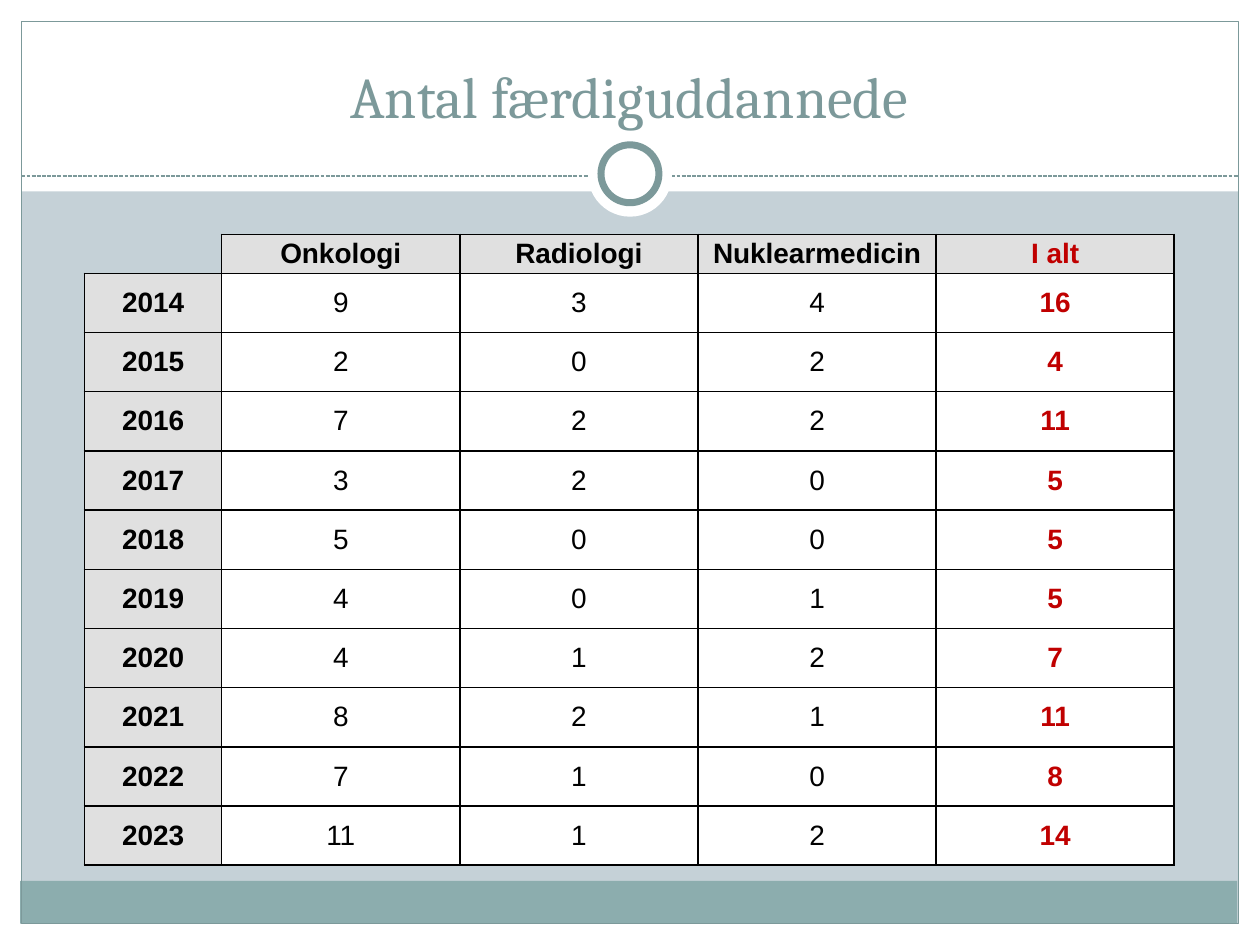
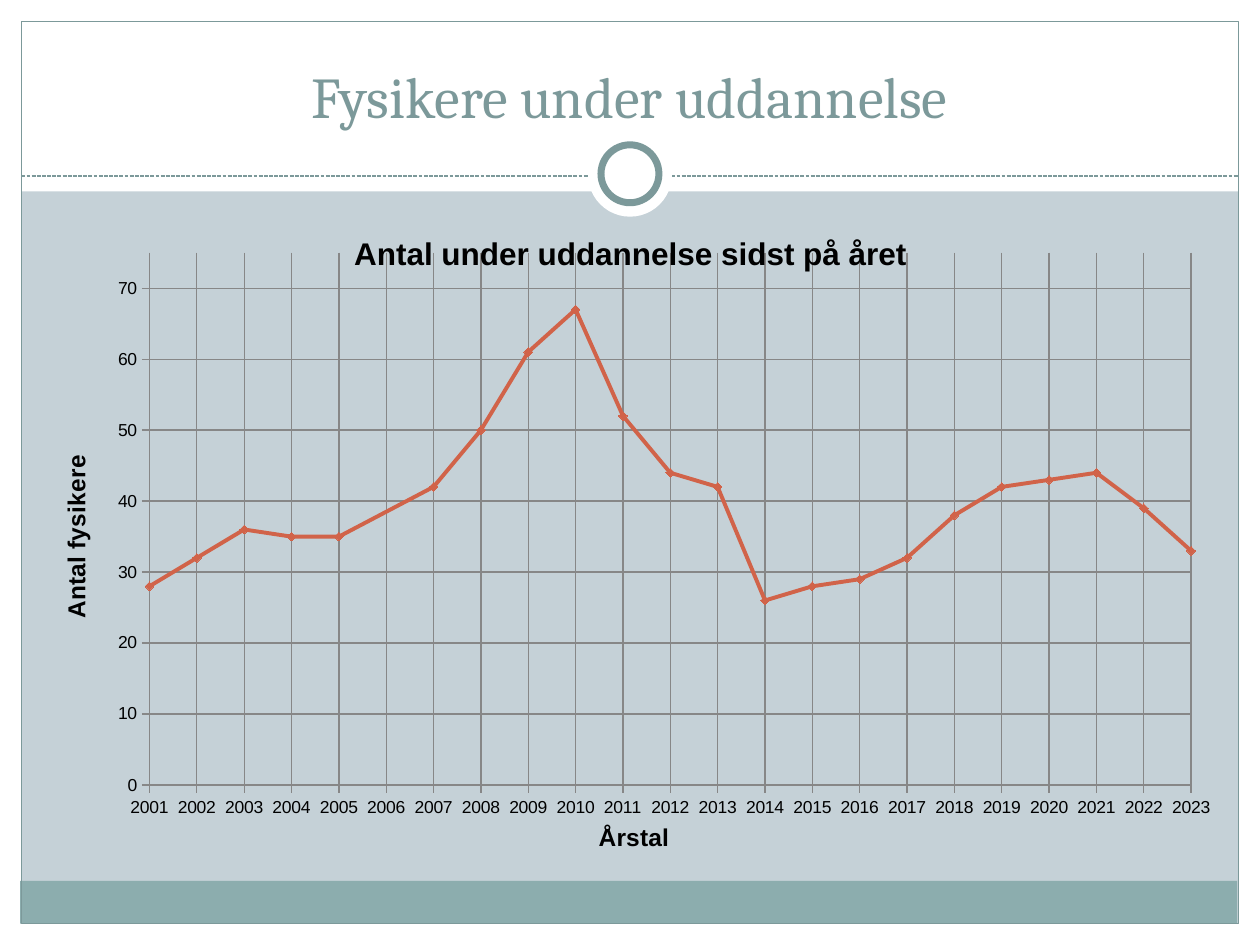
"""Build two slides about physicists in training: a table of graduates and a chart of trainees."""
from lxml.etree import SubElement
from pptx import Presentation
from pptx.chart.data import XyChartData
from pptx.dml.color import RGBColor
from pptx.enum.chart import XL_CHART_TYPE, XL_MARKER_STYLE, XL_TICK_MARK
from pptx.enum.dml import MSO_LINE
from pptx.enum.shapes import MSO_CONNECTOR, MSO_SHAPE
from pptx.enum.text import MSO_ANCHOR, PP_ALIGN
from pptx.oxml import parse_xml
from pptx.oxml.ns import nsdecls, qn
from pptx.util import Inches, Pt

WHITE = RGBColor(0xFF, 0xFF, 0xFF)
BLACK = RGBColor(0x00, 0x00, 0x00)
BLUE_GREY = RGBColor(0xC5, 0xD1, 0xD7)
TEAL = RGBColor(0x8C, 0xAD, 0xAE)
DARK_TEAL = RGBColor(0x7C, 0x99, 0x9A)
HEADER_GREY = RGBColor(0xE0, 0xE0, 0xE0)
GRID_GREY = RGBColor(0x87, 0x87, 0x87)
RED = RGBColor(0xC0, 0x00, 0x00)
ORANGE = RGBColor(0xD1, 0x63, 0x49)
TITLE_FONT = {"name": "Cambria", "size": Pt(33), "bold": False}
CELL_FORMAT = {
    "vertical_anchor": MSO_ANCHOR.MIDDLE,
    "margin_left": Inches(0.07),
    "margin_right": Inches(0.07),
    "margin_top": 0,
    "margin_bottom": 0,
}


def percent_box(left, top, width, height):
    """Turn percentages of the slide's size into lengths."""
    return [
        int(share * side / 100)
        for share, side in zip(
            (left, top, width, height),
            (presentation.slide_width, presentation.slide_height) * 2,
        )
    ]


def set_format(target, values, color=None):
    """Set attributes from a dict of values, and a font colour if given."""
    for name, value in values.items():
        setattr(target, name, value)
    if color is not None:
        target.color.rgb = color


presentation = Presentation()
presentation.slide_width = Inches(10)
presentation.slide_height = Inches(7.5)
layout = presentation.slide_layouts[5]
layout.background.fill.solid()
layout.background.fill.fore_color.rgb = BLUE_GREY
layout_title, *footers = layout.placeholders
for footer in footers:
    layout.shapes.element.remove(footer.element)
set_format(
    layout_title,
    dict(zip(("left", "top", "width", "height"), percent_box(3.3, 3.33, 93.3, 11.07))),
)

slides = []
for title_text in ("Antal færdiguddannede", "Fysikere under uddannelse"):
    slide = presentation.slides.add_slide(layout)
    title = slide.shapes.title
    title.text = title_text
    title.text_frame.vertical_anchor = MSO_ANCHOR.BOTTOM
    paragraph = title.text_frame.paragraphs[0]
    paragraph.alignment = PP_ALIGN.CENTER
    set_format(paragraph.runs[0].font, TITLE_FONT, DARK_TEAL)
    slides.append(slide)
table_slide, chart_slide = slides

RECTANGLE, OVAL = MSO_SHAPE.RECTANGLE, MSO_SHAPE.OVAL
decorations = [
    (RECTANGLE, (0, 97.73, 100, 2.27), WHITE, 0),
    (RECTANGLE, (0, 0, 100, 20.27), WHITE, 0),
    (RECTANGLE, (0, 0, 1.7, 100), WHITE, 0),
    (RECTANGLE, (98.3, 0, 1.7, 100), WHITE, 0),
    (RECTANGLE, (1.6, 93.2, 96.6, 4.53), TEAL, 0),
    (RECTANGLE, (1.7, 2.27, 96.6, 95.47), None, 0.75),
    (None, (1.7, 18.63, 98.3, 18.63), None, 0.75),
    (OVAL, (46.67, 14, 6.67, 8.93), WHITE, 0),
    (OVAL, (47.7, 15.33, 4.6, 6.13), WHITE, 4),
]
for position, (kind, box, fill_color, line_width) in enumerate(decorations, start=2):
    if kind is None:
        shape = table_slide.shapes.add_connector(MSO_CONNECTOR.STRAIGHT, *percent_box(*box))
        SubElement(shape.element.spPr, qn("a:effectLst"))
        shape.line.dash_style = MSO_LINE.SQUARE_DOT
    else:
        shape = table_slide.shapes.add_shape(kind, *percent_box(*box))
        shape.shadow.inherit = False
        if fill_color is None:
            shape.fill.background()
        else:
            shape.fill.solid()
            shape.fill.fore_color.rgb = fill_color
    if line_width:
        shape.line.color.rgb = DARK_TEAL
        shape.line.width = Pt(line_width)
    else:
        shape.line.fill.background()
    layout.shapes.element.insert(position, shape.element)

graduates = {
    2014: (9, 3, 4),
    2015: (2, 0, 2),
    2016: (7, 2, 2),
    2017: (3, 2, 0),
    2018: (5, 0, 0),
    2019: (4, 0, 1),
    2020: (4, 1, 2),
    2021: (8, 2, 1),
    2022: (7, 1, 0),
    2023: (11, 1, 2),
}
table_rows = [("", "Onkologi", "Radiologi", "Nuklearmedicin", "I alt")]
table_rows += [(year, *counts, sum(counts)) for year, counts in graduates.items()]
table = table_slide.shapes.add_table(
    len(table_rows), len(table_rows[0]), *percent_box(6.7, 24.8, 86.5, 66.93)
).table
set_format(table, {"first_row": False, "horz_banding": False})
for column_index, column in enumerate(table.columns):
    column.width = Inches(1.89 if column_index else 1.09)
for row_index, values in enumerate(table_rows):
    table.rows[row_index].height = Inches(0.47 if row_index else 0.31)
    for column_index, value in enumerate(values):
        cell = table.cell(row_index, column_index)
        is_corner = row_index == column_index == 0
        is_header = row_index == 0 or column_index == 0
        is_total = column_index == len(values) - 1
        set_format(cell, CELL_FORMAT)
        if is_corner:
            cell.fill.background()
        else:
            cell.fill.solid()
            cell.fill.fore_color.rgb = HEADER_GREY if is_header else WHITE
            cell.text = str(value)
            paragraph = cell.text_frame.paragraphs[0]
            paragraph.alignment = PP_ALIGN.CENTER
            set_format(
                paragraph.runs[0].font,
                {"name": "Arial", "size": Pt(16), "bold": is_header or is_total},
                RED if is_total else BLACK,
            )
        for border_index, side in enumerate(("lnL", "lnR", "lnT", "lnB")):
            hidden = is_corner and side in ("lnL", "lnT")
            paint = (
                "<a:noFill/>"
                if hidden
                else f'<a:solidFill><a:srgbClr val="{BLACK}"/></a:solidFill>'
            )
            border = parse_xml(f'<a:{side} {nsdecls("a")} w="{Pt(1)}">{paint}</a:{side}>')
            cell._tc.get_or_add_tcPr().insert(border_index, border)

years = [year for year in range(2001, 2024) if year != 2006]
trainees = [28, 32, 36, 35, 35, 42, 50, 61, 67, 52, 44,
            42, 26, 28, 29, 32, 38, 42, 43, 44, 39, 33]
chart_data = XyChartData()
series_data = chart_data.add_series("Series 1")
for year, count in zip(years, trainees):
    series_data.add_data_point(year, count)
chart = chart_slide.shapes.add_chart(
    XL_CHART_TYPE.XY_SCATTER_LINES, *percent_box(3.5, 22.67, 92.9, 68.27), chart_data
).chart
chart.has_legend = False
chart.plots[0].vary_by_categories = False
set_format(chart.font, {"name": "Cambria", "size": Pt(10)}, BLACK)

series = chart.plots[0].series[0]
series.smooth = False
series.format.line.color.rgb = ORANGE
series.format.line.width = Pt(2.25)
set_format(series.marker, {"style": XL_MARKER_STYLE.DIAMOND, "size": 5})
series.marker.format.fill.solid()
series.marker.format.fill.fore_color.rgb = ORANGE
series.marker.format.line.color.rgb = ORANGE

year_axis, count_axis = chart.category_axis, chart.value_axis
for axis, minimum, maximum, step in ((year_axis, 2001, 2023, 1), (count_axis, 0, 75, 10)):
    set_format(axis, {
        "minimum_scale": minimum,
        "maximum_scale": maximum,
        "major_unit": step,
        "has_major_gridlines": True,
        "major_tick_mark": XL_TICK_MARK.OUTSIDE,
        "minor_tick_mark": XL_TICK_MARK.NONE,
    })
    set_format(axis.tick_labels.font, {"name": "Arial", "size": Pt(10)}, BLACK)
    for line in (axis.format.line, axis.major_gridlines.format.line):
        line.color.rgb = GRID_GREY
        line.width = Pt(0.75)

for owner, text, size in (
    (chart.chart_title, "Antal under uddannelse sidst på året", 18),
    (year_axis.axis_title, "Årstal", 14),
    (count_axis.axis_title, "Antal fysikere", 14),
):
    owner.text_frame.text = text
    font = owner.text_frame.paragraphs[0].runs[0].font
    set_format(font, {"name": "Arial", "size": Pt(size), "bold": True}, BLACK)

chart_title, year_title, count_title = chart.element.findall(".//" + qn("c:title"))
chart_title.find(qn("c:overlay")).set("val", "1")
plot_area = chart.element.find(".//" + qn("c:plotArea"))
for element, index, places in (
    (plot_area, 0, {"x": 0.09, "y": 0.06, "w": 0.89, "h": 0.83}),
    (chart_title, 1, {"x": 0.26, "y": 0.02}),
    (year_title, 1, {"x": 0.47, "y": 0.94}),
    (count_title, 1, {"x": 0.01, "y": 0.37}),
):
    for previous in element.findall(qn("c:layout")):
        element.remove(previous)
    manual = {"xMode": "edge", "yMode": "edge", **places}
    if element is plot_area:
        manual = {"layoutTarget": "inner", **manual}
    chart_layout = parse_xml(f'<c:layout {nsdecls("c")}><c:manualLayout/></c:layout>')
    for name, value in manual.items():
        SubElement(chart_layout[0], qn(f"c:{name}")).set("val", str(value))
    element.insert(index, chart_layout)

presentation.save("out.pptx")
